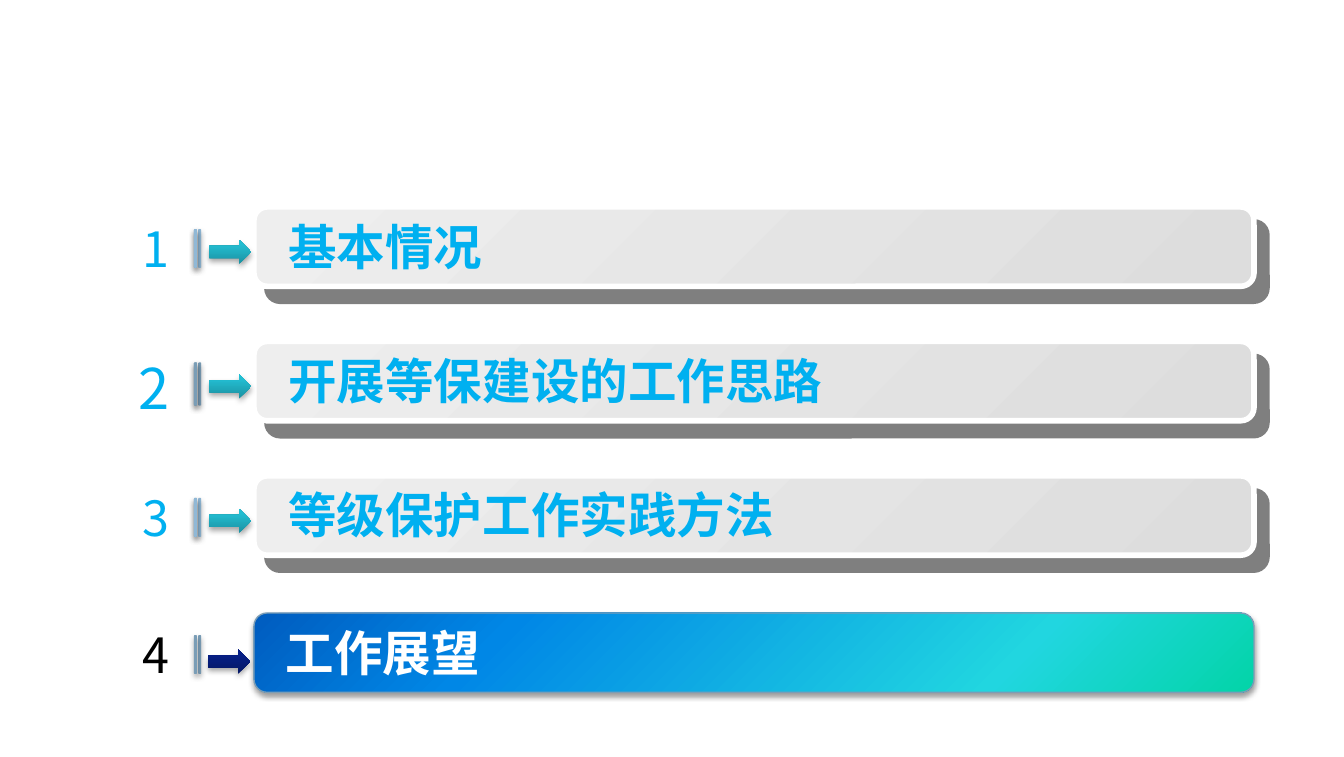
from lxml import etree
from pptx import Presentation
from pptx.dml.color import RGBColor
from pptx.enum.shapes import MSO_SHAPE as Preset
from pptx.enum.text import MSO_AUTO_SIZE as AutoSize, PP_ALIGN as Align
from pptx.oxml.ns import qn
from pptx.util import Cm, Pt

FONT = "Noto Sans CJK SC"
COLORS = {"white": "FFFFFF", "black": "000000", "sky": "00B0F0", "blue": "0066CC",
          "light_edge": "90B8D6", "dark_edge": "7A9DB6"}
# Gradient stops: (position in percent, colour)
GRADIENTS = {
    "gray_bar": [(0, "EEEEEE"), (100, "DDDDDD")],
    "active_bar": [(0, "03D4A8"), (25, "21D6E0"), (75, "0087E6"), (100, "005CBF")],
    "light_tick": [(0, "C1E2FF"), (35, "D2EAFF"), (100, "EEF7FF")],
    "dark_tick": [(0, "B8D8F3"), (35, "CDE3F6"), (100, "EBF4FC")],
    "teal_arrow": [(0, "1B91A1"), (80, "23BDD1"), (100, "20C0D5")],
    "navy_arrow": [(0, "051866"), (80, "071F85"), (100, "041D88")],
}
# Shadows: opacity percent, blur pt, distance pt, direction in degrees
HARD_SHADOW = (50, 0, 10.6, 49)
SOFT_SHADOW = (38, 3.1, 1.6, 90)
ARROW_SHADOW = (35, 3.1, 1.8, 90)

GRAY_STYLE = {"bar": "gray_bar", "angle": 45, "edge": ("white", 3), "shadow": HARD_SHADOW,
              "title_color": "sky", "number_color": "sky", "number_size": 26,
              "title_x": 2.95, "title_width": 17.65,
              "tick": "light_tick", "tick_edge": "light_edge",
              "ticks_x": (1.5, 1.42, 1.42), "tick_y": 0.43, "tick_height": 0.71,
              "arrow": "teal_arrow", "arrow_x": 1.7, "arrow_y": 0.62}
SECOND_STYLE = GRAY_STYLE | {"number_size": 30, "tick": "dark_tick", "tick_edge": "dark_edge",
                             "tick_y": 0.41, "tick_height": 0.79}
ACTIVE_STYLE = GRAY_STYLE | {"bar": "active_bar", "angle": None, "edge": ("dark_edge", 0.75),
                             "shadow": SOFT_SHADOW, "title_color": "white",
                             "number_color": "black", "title_x": 2.9, "title_width": 17.93,
                             "tick": None, "tick_edge": "dark_edge", "ticks_x": (1.5, 1.42),
                             "arrow": "navy_arrow", "arrow_x": 1.68, "arrow_y": 0.69}

# Row top in cm, title, style
AGENDA = [(3.91, "基本情况", GRAY_STYLE),
          (6.45, "开展等保建设的工作思路", SECOND_STYLE),
          (8.99, "等级保护工作实践方法", GRAY_STYLE),
          (11.58, "工作展望", ACTIVE_STYLE)]
AGENDA_LEFT = 2.26


def rgb(name):
    return RGBColor.from_string(COLORS[name])


def add_color(parent, color):
    return etree.SubElement(parent, qn("a:srgbClr"), val=color)


def set_gradient(shape, stops, angle):
    """Fill along an angle, or outwards from the bottom right corner if there is none."""
    gradient = etree.Element(qn("a:gradFill"), rotWithShape="1")
    stop_list = etree.SubElement(gradient, qn("a:gsLst"))
    for position, color in stops:
        add_color(etree.SubElement(stop_list, qn("a:gs"), pos=str(position * 1000)), color)
    if angle is None:
        circle = etree.SubElement(gradient, qn("a:path"))
        circle.set("path", "circle")
        etree.SubElement(circle, qn("a:fillToRect"), l="100000", t="100000")
    else:
        etree.SubElement(gradient, qn("a:lin"), ang=str(angle * 60000), scaled="0")
    shape._element.spPr.find(qn("a:prstGeom")).addnext(gradient)


def set_shadow(shape, opacity, blur, distance, direction):
    shape.shadow.inherit = False
    effects = shape._element.spPr.find(qn("a:effectLst"))
    outer = etree.SubElement(effects, qn("a:outerShdw"), blurRad=str(Pt(blur)),
                             dist=str(Pt(distance)), dir=str(direction * 60000),
                             algn="ctr", rotWithShape="0")
    etree.SubElement(add_color(outer, COLORS["black"]), qn("a:alpha"), val=str(opacity * 1000))


def add_block(group, preset, box, gradient, angle, shadow, edge=None):
    shape = group.shapes.add_shape(preset, *(Cm(value) for value in box))
    if gradient:
        set_gradient(shape, GRADIENTS[gradient], angle)
    else:
        shape.fill.solid()
        shape.fill.fore_color.rgb = rgb("blue")
    if edge:
        shape.line.color.rgb = rgb(edge[0])
        shape.line.width = Pt(edge[1])
    else:
        shape.line.fill.background()
    set_shadow(shape, *shadow)


def add_label(group, box, text, color, size, bold=False, align=Align.LEFT):
    frame = group.shapes.add_textbox(*(Cm(value) for value in box)).text_frame
    for name, value in {"word_wrap": True, "auto_size": AutoSize.SHAPE_TO_FIT_TEXT,
                        "margin_top": 0, "margin_bottom": 0}.items():
        setattr(frame, name, value)
    paragraph = frame.paragraphs[0]
    paragraph.alignment = align
    run = paragraph.add_run()
    run.text = text
    for name, value in {"name": FONT, "size": Pt(size), "bold": bold}.items():
        setattr(run.font, name, value)
    run.font.color.rgb = rgb(color)
    east_asian = etree.Element(qn("a:ea"), typeface=FONT)
    run._r.rPr.find(qn("a:latin")).addnext(east_asian)


def add_agenda_row(slide, left, top, number, title, style):
    group = slide.shapes.add_group_shape()
    # Bar and title
    add_block(group, Preset.ROUNDED_RECTANGLE, (left + 2.54, top, 18.9, 1.5),
              style["bar"], style["angle"], style["shadow"], style["edge"])
    add_label(group, (left + style["title_x"] - 0.01, top + 0.18, style["title_width"], 1.35),
              title, style["title_color"], 26, bold=True)
    # Thin ticks beside the number
    for tick_x in style["ticks_x"]:
        add_block(group, Preset.ROUNDED_RECTANGLE,
                  (left + tick_x, top + style["tick_y"], 0.03, style["tick_height"]),
                  style["tick"], 270, SOFT_SHADOW, (style["tick_edge"], 0.75))
    # Number and arrow
    add_label(group, (left, top + 0.23, 1.19, 1.35), str(number),
              style["number_color"], style["number_size"], align=Align.RIGHT)
    add_block(group, Preset.RIGHT_ARROW,
              (left + style["arrow_x"], top + style["arrow_y"], 0.79, 0.46),
              style["arrow"], 270, ARROW_SHADOW)


def main():
    presentation = Presentation()
    presentation.slide_width, presentation.slide_height = Cm(25.4), Cm(14.3)
    slide = presentation.slides.add_slide(presentation.slide_layouts[6])
    for number, (top, title, style) in enumerate(AGENDA, start=1):
        add_agenda_row(slide, AGENDA_LEFT, top, number, title, style)
    presentation.save("out.pptx")


if __name__ == "__main__":
    main()
